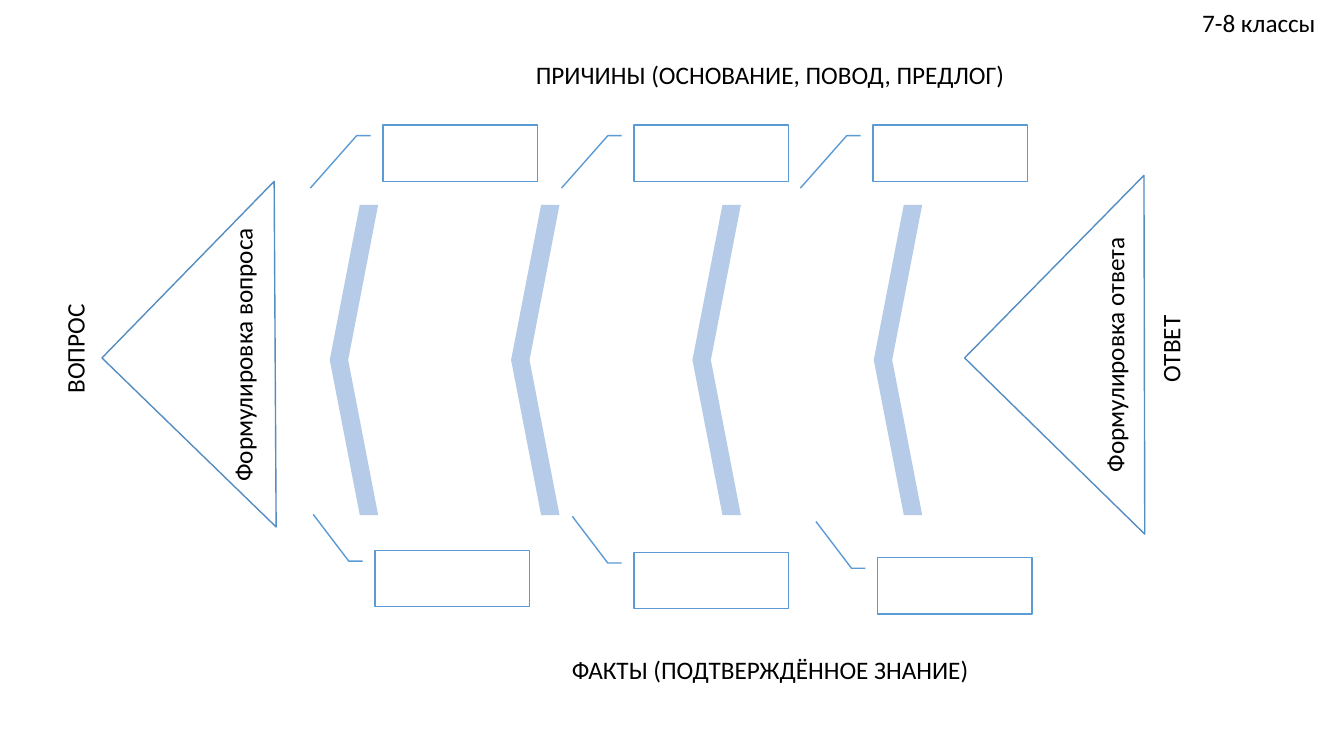
from pptx import Presentation
from pptx.dml.color import RGBColor
from pptx.enum.shapes import MSO_SHAPE
from pptx.enum.text import MSO_AUTO_SIZE, PP_ALIGN
from pptx.util import Cm, Pt

CHEVRON, CALLOUT = MSO_SHAPE.CHEVRON, MSO_SHAPE.LINE_CALLOUT_2
MID, RIGHT = PP_ALIGN.CENTER, PP_ALIGN.RIGHT
FIT = MSO_AUTO_SIZE.SHAPE_TO_FIT_TEXT


class Theme:
    font = "Calibri"
    size = Pt(18)
    line = Pt(1)
    ink = RGBColor(0, 0, 0)
    paper = RGBColor(255, 255, 255)
    bone = RGBColor(0xB5, 0xCB, 0xE7)
    edge = RGBColor(0x53, 0x8D, 0xC1)
    frame = RGBColor(0x5B, 0x9B, 0xD5)


# Content; all lengths in cm
# text, centre x, centre y, width, turn, alignment
LABELS = [
    ("ВОПРОС", 1.89, 8.79, 7.5, 270, MID),
    ("ПРИЧИНЫ (ОСНОВАНИЕ, ПОВОД, ПРЕДЛОГ)", 19.41, 1.88, 17.78, 0, MID),
    ("ФАКТЫ (ПОДТВЕРЖДЁННОЕ ЗНАНИЕ)", 19.41, 16.89, 25.96, 0, MID),
    ("Формулировка вопроса", 6.12, 8.94, 7.77, 270, MID),
    ("Формулировка ответа", 28.09, 8.94, 7.77, 270, MID),
    ("ОТВЕТ", 29.5, 8.79, 7.5, 270, MID),
    ("7-8 классы", 31.31, 0.58, 4.19, 0, RIGHT),
]
# tip, upper corner, lower corner
TAIL = [(2.57, 9.02), (6.91, 4.57), (6.96, 13.28)]
HEAD = [(24.31, 9.02), (28.83, 4.42), (28.85, 13.46)]
# left, top of each box
CAUSES = [(9.65, 3.15), (15.98, 3.15), (22, 3.15)]
FACTS = [(9.45, 13.87), (15.98, 13.92), (22.12, 14.05)]
DOWN = [0.19, -0.08, 0.19, -0.17, 1.12, -0.47]
UP = [0.19, -0.08, 0.19, -0.17, -0.64, -0.4]
BOX_W, BOX_H = 3.89, 1.42
BONES, BONE_X, BONE_Y, STEP = 4, 8.31, 5.16, 4.57
BONE_W, BONE_H, BEND = 1.22, 7.82, 0.62
TEXT_H = 1.03

deck = Presentation()
deck.slide_width, deck.slide_height = Cm(33.87), Cm(19.05)
slide = deck.slides.add_slide(deck.slide_layouts[6])
shapes = slide.shapes


def paint(shape, fill, line=None):
    shape.shadow.inherit = False
    shape.fill.solid()
    shape.fill.fore_color.rgb = fill
    if line is None:
        shape.line.fill.background()
    else:
        shape.line.color.rgb = line
        shape.line.width = Theme.line


def add_bone(left):
    bone = shapes.add_shape(CHEVRON, Cm(left), Cm(BONE_Y), Cm(BONE_W), Cm(BONE_H))
    bone.rotation = 180
    bone.adjustments[0] = BEND
    paint(bone, Theme.bone)


def add_fin(points):
    first, *rest = [(Cm(x), Cm(y)) for x, y in points]
    pen = shapes.build_freeform(*first)
    pen.add_line_segments(rest, close=True)
    paint(pen.convert_to_shape(), Theme.paper, Theme.edge)


def add_box(left, top, bends):
    box = shapes.add_shape(CALLOUT, Cm(left), Cm(top), Cm(BOX_W), Cm(BOX_H))
    for i, bend in enumerate(bends):
        box.adjustments[i] = bend
    paint(box, Theme.paper, Theme.frame)


def add_label(text, x, y, width, turn, align):
    label = shapes.add_textbox(
        Cm(x - width / 2), Cm(y - TEXT_H / 2), Cm(width), Cm(TEXT_H))
    label.rotation = turn
    frame = label.text_frame
    frame.word_wrap = True
    frame.auto_size = FIT
    frame.text = text
    line = frame.paragraphs[0]
    line.alignment = align
    font = line.runs[0].font
    font.name, font.size = Theme.font, Theme.size
    font.color.rgb = Theme.ink


# Skeleton of the fish
for i in range(BONES):
    add_bone(BONE_X + i * STEP)
for fin in (TAIL, HEAD):
    add_fin(fin)

# Boxes for causes above and facts below
for spots, bends in ((CAUSES, DOWN), (FACTS, UP)):
    for left, top in spots:
        add_box(left, top, bends)

# Labels
for label in LABELS:
    add_label(*label)

deck.save("out.pptx")
